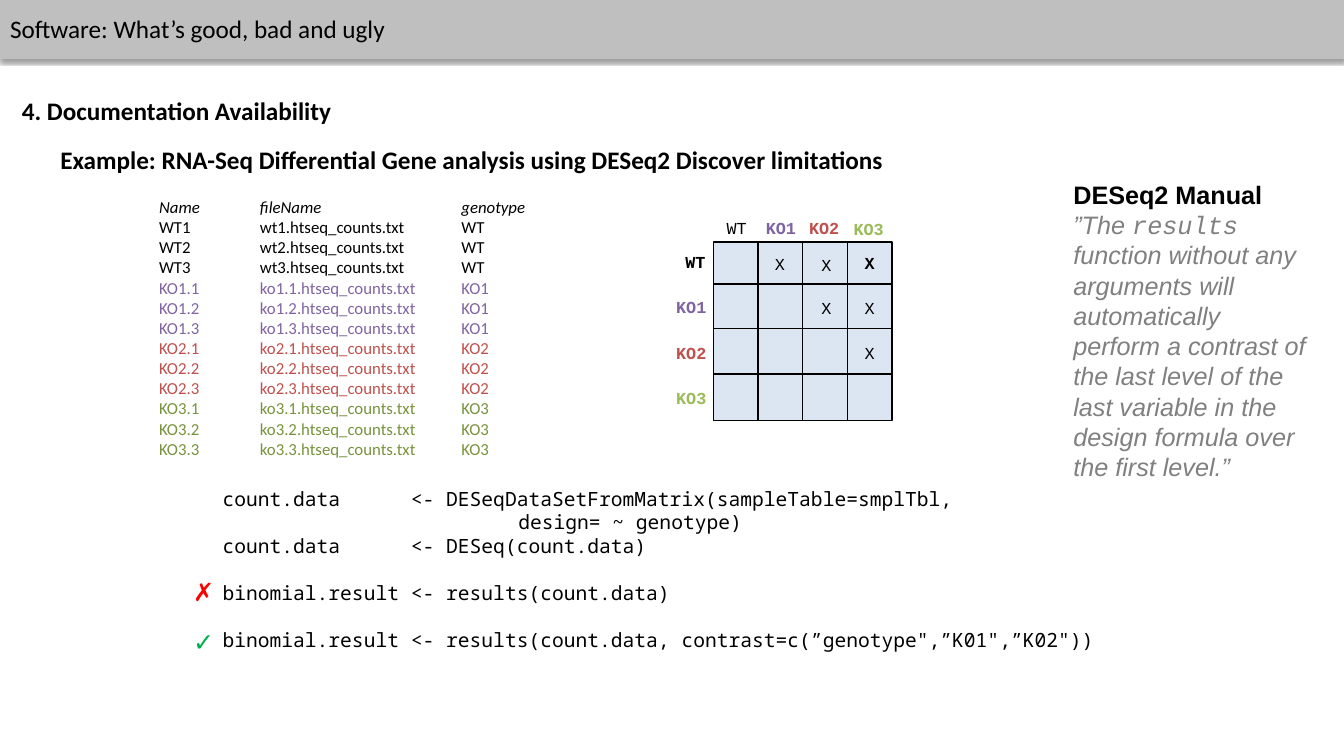
from lxml import etree
from pptx import Presentation
from pptx import util as u
from pptx.dml.color import RGBColor
from pptx.enum import shapes, text
from pptx.oxml import parse_xml
from pptx.oxml.ns import nsdecls, qn

BLACK, GREY, SILVER = "000000", "808080", "BFBFBF"
PURPLE, RED, GREEN, OLIVE = "8064A2", "C0504D", "9BBB59", "77933C"
MONO = "Courier New"


def add_run(p, words, size=18, font="Calibri", color=BLACK, bold=False, italic=False):
    r = p.add_run()
    r.text = words
    r.font.size = u.Pt(size)
    r.font.name = font
    r.font.bold = bold
    r.font.italic = italic
    r.font.color.rgb = RGBColor.from_string(color)


def add_box(left, top, width, height, wrap=False):
    box = s.shapes.add_textbox(u.Cm(left), u.Cm(top), u.Cm(width), u.Cm(height))
    box.text_frame.word_wrap = wrap
    return box.text_frame


prs = Presentation()
prs.slide_width, prs.slide_height = u.Cm(33.87), u.Cm(19.05)
s = prs.slides.add_slide(prs.slide_layouts[5])

GRID_LEFT, GRID_TOP, GRID_SIZE = 17.98, 6.1, 4.5
for left, top, width, height, fill, line, weight in [
    (0, 0, 33.87, 1.47, SILVER, SILVER, 0.75),
    (GRID_LEFT, GRID_TOP, GRID_SIZE, GRID_SIZE, "DCE6F2", BLACK, 1.25),
]:
    sp = s.shapes.add_shape(shapes.MSO_SHAPE.RECTANGLE,
                            u.Cm(left), u.Cm(top), u.Cm(width), u.Cm(height))
    sp.shadow.inherit = False
    sp.fill.solid()
    sp.fill.fore_color.rgb = RGBColor.from_string(fill)
    sp.line.color.rgb = RGBColor.from_string(line)
    sp.line.width = u.Pt(weight)
    if top == 0:
        sp._element.spPr.find(qn("a:effectLst")).append(parse_xml(
            f'<a:outerShdw {nsdecls("a")} blurRad="39370" dist="20320" dir="5400000" '
            'rotWithShape="0"><a:srgbClr val="000000"><a:alpha val="38000"/></a:srgbClr>'
            '</a:outerShdw>'))

title = s.shapes.title
s.shapes._spTree.append(title._element)
title.left, title.top, title.width, title.height = u.Cm(0), u.Cm(0.2), u.Cm(10.08), u.Cm(1.02)
title.line.color.rgb = RGBColor.from_string(SILVER)
title.line.width = u.Pt(0.75)
tf = title.text_frame
tf.word_wrap = False
tf.auto_size = text.MSO_AUTO_SIZE.NONE
tf.vertical_anchor = text.MSO_ANCHOR.TOP
tf.paragraphs[0].alignment = text.PP_ALIGN.LEFT
add_run(tf.paragraphs[0], "Software: What’s good, bad and ugly")

tf = add_box(0.3, 2.29, 8.38, 1.02)
add_run(tf.paragraphs[0], "4. Documentation Availability", bold=True)
tf = add_box(1.27, 3.51, 21.44, 1.02)
add_run(tf.paragraphs[0],
        "Example: RNA-Seq Differential Gene analysis using DESeq2 Discover limitations", bold=True)

samples = [("Name\tfileName\tgenotype", BLACK, True)]
for i in range(1, 4):
    samples.append((f"WT{i}\twt{i}.htseq_counts.txt\tWT", BLACK, False))
for group, color in enumerate([PURPLE, RED, OLIVE], 1):
    for i in range(1, 4):
        line = f"KO{group}.{i}\tko{group}.{i}.htseq_counts.txt\tKO{group}"
        samples.append((line, color, False))

tf = add_box(3.76, 4.83, 9.83, 6.93)
for i, (line, color, italic) in enumerate(samples):
    p = tf.paragraphs[0] if i == 0 else tf.add_paragraph()
    tabs = etree.SubElement(p._p.get_or_add_pPr(), qn("a:tabLst"))
    for stop in (2.54, 7.62):
        etree.SubElement(tabs, qn("a:tab"), pos=str(u.Cm(stop)), algn="l")
    add_run(p, line, size=12, color=color, italic=italic)

right, bottom = GRID_LEFT + GRID_SIZE, GRID_TOP + GRID_SIZE
grid_lines = [(x, GRID_TOP, x, bottom) for x in (19.1, 20.22, 21.36)]
grid_lines += [(right, y, GRID_LEFT, y) for y in (7.16, 8.28, 9.42)]
for ends in grid_lines:
    line = s.shapes.add_connector(shapes.MSO_CONNECTOR.STRAIGHT, *[u.Cm(v) for v in ends])
    line.line.color.rgb = RGBColor.from_string(BLACK)
    line.line.width = u.Pt(1)
    etree.SubElement(line._element.spPr, qn("a:effectLst"))

genotypes = [
    ("WT", BLACK, 18.06, 5.36, 17.02, 1.04),
    ("KO1", PURPLE, 19.05, 5.36, 16.79, 1.3),
    ("KO2", RED, 20.14, 5.36, 16.79, 1.3),
    ("KO3", GREEN, 21.26, 5.38, 16.79, 1.3),
]
grid_labels = []
for i, (name, color, col_left, col_top, row_left, width) in enumerate(genotypes):
    grid_labels.append((name, color, col_left, col_top, width, i > 0))
    grid_labels.append((name, color, row_left, 6.22 + 1.143 * i, width, True))
for left, top in [(19.28, 6.27), (20.45, 6.3), (21.54, 6.25),
                  (20.45, 7.37), (21.54, 7.37), (21.54, 8.51)]:
    grid_labels.append(("X", BLACK, left, top, 0.76, top == 6.25))
for words, color, left, top, width, bold in grid_labels:
    tf = add_box(left, top, width, 0.76)
    add_run(tf.paragraphs[0], words, size=12, font=MONO, color=color, bold=bold)

tf = add_box(26.8, 4.39, 6.45, 7.95, wrap=True)
add_run(tf.paragraphs[0], "DESeq2 Manual", font="Arial", bold=True)
p = tf.add_paragraph()
for words, font in [
    ("”The ", "Arial"),
    ("results", MONO),
    (" function without any arguments will automatically perform a contrast of the last level "
     "of the last variable in the design formula over the first level.”", "Arial"),
]:
    add_run(p, words, font=font, color=GREY, italic=True)

code = [
    ("count.data      <- DESeqDataSetFromMatrix(sampleTable=smplTbl,", 0),
    ("\t\t\t\t        design= ~ genotype)", 0),
    ("count.data      <- DESeq(count.data)", 0),
    ("binomial.result <- results(count.data)", 16.8),
    ("binomial.result <- results(count.data, contrast=c(”genotype\",”K01\",”K02\"))", 16.8),
]
tf = add_box(5.36, 12.14, 24.92, 4.45, wrap=True)
for i, (line, gap) in enumerate(code):
    p = tf.paragraphs[0] if i == 0 else tf.add_paragraph()
    if gap:
        p.space_before = u.Pt(gap)
    add_run(p, line, size=14, font="Noto Sans Mono")

for mark, top, color in [("✗", 14.4, "FF0000"), ("✓", 15.65, "00B050")]:
    tf = add_box(4.62, top, 1.14, 1.02)
    add_run(tf.paragraphs[0], mark, color=color)

prs.save("out.pptx")
